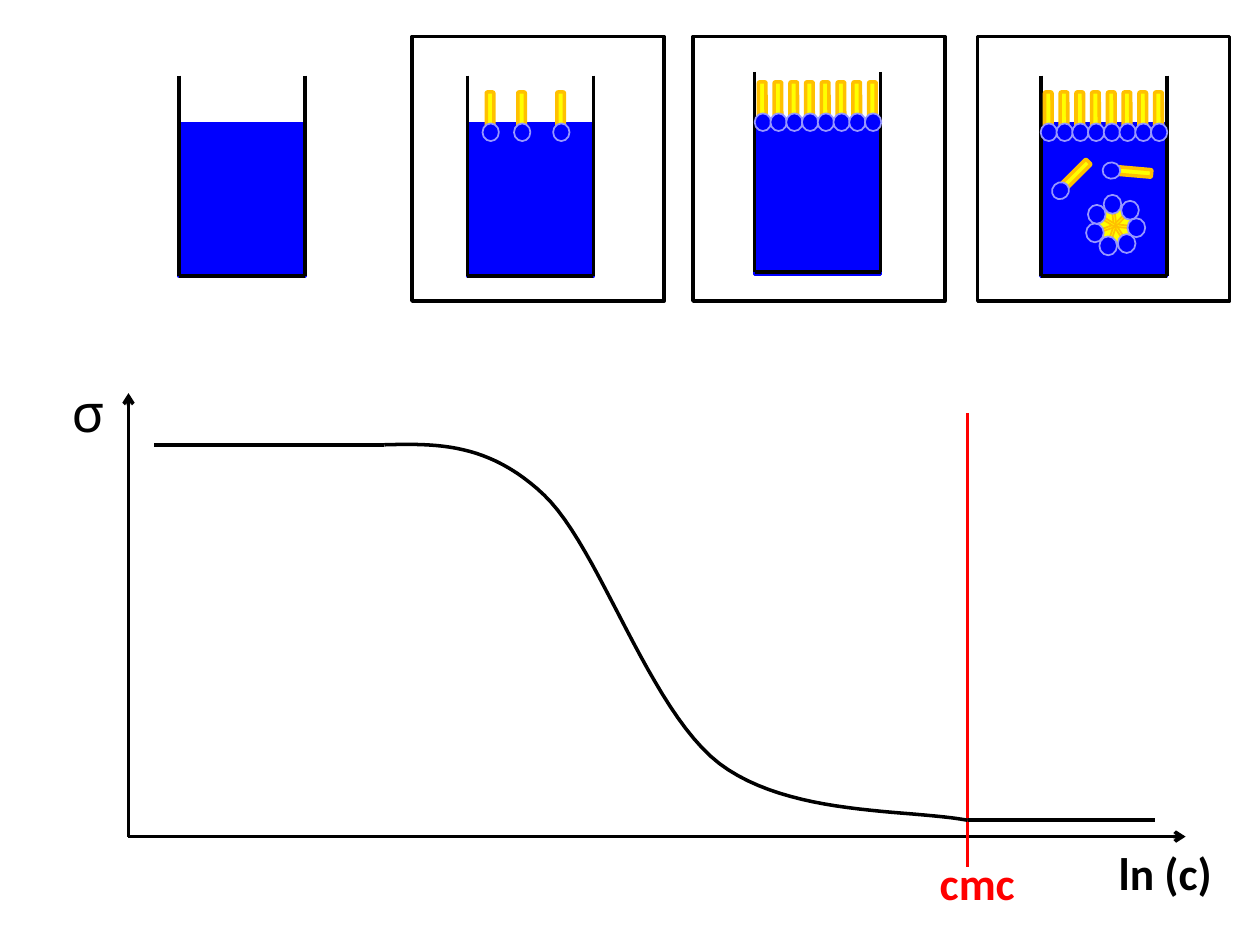
from math import cos, sin, radians

from lxml.etree import SubElement
from pptx import Presentation
from pptx.dml.color import RGBColor
from pptx.enum.shapes import MSO_CONNECTOR, MSO_SHAPE
from pptx.oxml.ns import qn
from pptx.util import Inches, Pt

THEME = {
    "ink": "000000", "water": "0000FF", "rim": "9797FF", "tail": "FFFF00",
    "edge": "FFC000", "mark": "FF0000", "thick": 2, "thin": 1,
    "label": 26, "symbol": 30,
}
ROW = [0.125 * i for i in range(8)]
BEAKERS = [
    {"left": 1.42, "top": 0.6, "water": 0.98, "frame": None, "head": 0.98, "heads": []},
    {"left": 3.71, "top": 0.6, "water": 0.98, "frame": 3.27, "head": 0.98, "heads": [0.12, 0.37, 0.68]},
    {"left": 5.99, "top": 0.57, "water": 0.97, "frame": 5.5, "head": 0.9, "heads": ROW},
    {"left": 8.26, "top": 0.6, "water": 0.98, "frame": 7.76, "head": 0.98, "heads": ROW},
]
LOOSE = [(8.44, 1.48, 45), (8.88, 1.42, 95)]
MICELLE = {"x": 8.85, "y": 1.79, "ring": 0.17, "count": 7, "start": -7}
LABELS = [
    ("ln (c)", 8.78, 6.66, 0.94, 0.54, "label", "Calibri", "ink", True),
    ("σ", 0.47, 2.97, 0.39, 0.61, "symbol", "Karla", "ink", False),
    ("cmc", 7.36, 6.74, 0.88, 0.54, "label", "Calibri", "mark", True),
]
AXES = [(1.02, 6.64, 1.02, 3.12), (1.02, 6.64, 9.41, 6.64)]
CMC = (7.68, 6.88, 7.68, 3.28)
FLATS = [(7.68, 6.51, 9.17, 6.51), (3.05, 3.53, 1.22, 3.53)]
CURVE = [(3.05, 3.53), (3.46, 3.52), (3.88, 3.51), (4.32, 3.93), (4.76, 4.35),
         (5.15, 5.63), (5.71, 6.06), (6.27, 6.48), (7.2, 6.42), (7.68, 6.51)]


def tint(name):
    """Return a theme colour."""
    return RGBColor.from_string(THEME[name])


def style(item, fill, line, width="thick"):
    """Set the fill and outline of a shape."""
    item.shadow.inherit = False
    if fill:
        item.fill.solid()
        item.fill.fore_color.rgb = tint(fill)
    else:
        item.fill.background()
    item.line.color.rgb = tint(line)
    item.line.width = Pt(THEME[width])


def shape(host, kind, box, fill, line, width="thick", turn=0):
    """Add a styled preset shape."""
    item = host.add_shape(kind, *map(Inches, box))
    style(item, fill, line, width)
    item.rotation = turn


def line(host, ends, color="ink", arrow=False):
    """Add a straight line with an optional arrowhead."""
    item = host.add_connector(MSO_CONNECTOR.STRAIGHT, *map(Inches, ends))
    item.line.color.rgb = tint(color)
    item.line.width = Pt(THEME["thick"])
    if arrow:
        SubElement(item.line._get_or_add_ln(), qn("a:tailEnd"), type="arrow")
    SubElement(item._element.spPr, qn("a:effectLst"))


def soap(host, x, y):
    """Add one upright molecule with its head at x, y."""
    shape(host, MSO_SHAPE.ROUNDED_RECTANGLE, (x + 0.03, y - 0.25, 0.06, 0.28), "tail", "edge")
    shape(host, MSO_SHAPE.OVAL, (x, y, 0.13, 0.14), "water", "rim", "thin")


def beaker(host, left, top, water, frame, head, heads):
    """Draw a filled beaker, its frame and its surface layer."""
    right, base = left + 1, top + 1.59
    shape(host, MSO_SHAPE.RECTANGLE, (left, water, 1, 1.21), "water", "water")
    if frame:
        shape(host, MSO_SHAPE.RECTANGLE, (frame, 0.29, 2, 2.1), None, "ink")
    for ends in [(left, top, left, base), (right, top, right, base), (left, base, right, base)]:
        line(host, ends)
    for step in heads:
        soap(host, left + step, head)


def micelle(host, x, y, ring, count, start):
    """Draw a ring of heads with tails pointing inward."""
    shape(host, MSO_SHAPE.OVAL, (x - 0.155, y - 0.16, 0.31, 0.32), "tail", "edge")
    turns = [start + 360 * i / count for i in range(count)]
    spots = [(sin(radians(a)), -cos(radians(a)), a) for a in turns]
    for dx, dy, turn in spots:
        box = (x + 0.06 * dx - 0.01, y + 0.06 * dy - 0.06, 0.02, 0.12)
        shape(host, MSO_SHAPE.ROUNDED_RECTANGLE, box, "tail", "edge", "thin", turn)
    for dx, dy, turn in spots:
        box = (x + ring * dx - 0.07, y + ring * dy - 0.075, 0.14, 0.15)
        shape(host, MSO_SHAPE.OVAL, box, "water", "rim", "thin")


def trace(nodes, steps=24):
    """Sample a chain of cubic curves."""
    dots = [nodes[0]]
    for i in range(0, len(nodes) - 1, 3):
        for n in range(1, steps + 1):
            t = n / steps
            mix = ((1 - t) ** 3, 3 * t * (1 - t) ** 2, 3 * t * t * (1 - t), t ** 3)
            dots.append(tuple(sum(m * p[k] for m, p in zip(mix, nodes[i:i + 4])) for k in (0, 1)))
    return dots


def curve(host, nodes):
    """Draw an open smooth curve."""
    dots = [(Inches(x), Inches(y)) for x, y in trace(nodes)]
    path = host.build_freeform(*dots[0])
    path.add_line_segments(dots[1:], close=False)
    style(path.convert_to_shape(), None, "ink")


def label(host, words, x, y, wide, high, size, font, color, bold):
    """Add a one-line label."""
    frame = host.add_textbox(*map(Inches, (x, y, wide, high))).text_frame
    frame.word_wrap = True
    run = frame.paragraphs[0].add_run()
    run.text = words
    run.font.name = font
    run.font.size = Pt(THEME[size])
    run.font.bold = bold
    run.font.color.rgb = tint(color)


def main():
    """Build the surface tension slide."""
    deck = Presentation()
    deck.slide_width, deck.slide_height = Inches(10), Inches(7.5)
    host = deck.slides.add_slide(deck.slide_layouts[6]).shapes
    for item in BEAKERS:
        beaker(host, **item)
    for x, y, turn in LOOSE:
        group = host.add_group_shape()
        soap(group.shapes, x, y)
        group.rotation = turn
    micelle(host, **MICELLE)
    for ends in AXES:
        line(host, ends, arrow=True)
    line(host, CMC, "mark")
    for item in LABELS:
        label(host, *item)
    curve(host, CURVE)
    for ends in FLATS:
        line(host, ends)
    deck.save("out.pptx")


if __name__ == "__main__":
    main()
